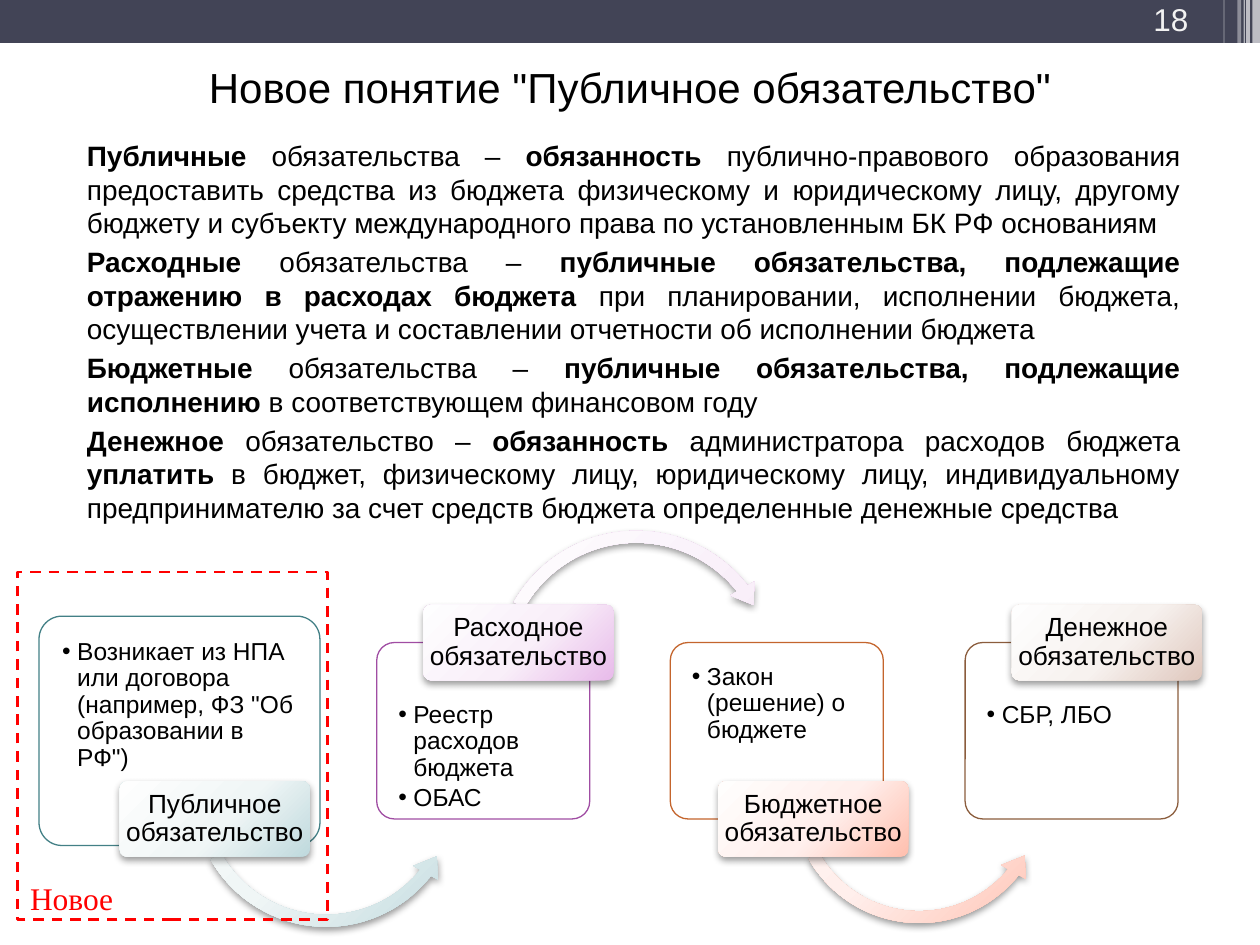
from pptx import Presentation
from pptx.dml.color import RGBColor
from pptx.enum.dml import MSO_LINE
from pptx.enum.shapes import MSO_SHAPE
from pptx.enum.text import MSO_ANCHOR, MSO_AUTO_SIZE, PP_ALIGN
from pptx.oxml import parse_xml
from pptx.oxml.ns import nsdecls, qn
from pptx.util import Inches, Pt

# ---- Content ----
COLOURS = {"bar": "424456", "white": "FFFFFF", "black": "000000",
           "number": "F2F2F2", "new": "FF0000"}
TITLE = 'Новое понятие "Публичное обязательство"'
# Asterisks enclose the bold parts
DEFINITIONS = [
    "*Публичные *обязательства – *обязанность* публично-правового образования "
    "предоставить средства из бюджета физическому и юридическому лицу, другому "
    "бюджету и субъекту международного права по установленным БК РФ основаниям",
    "*Расходные *обязательства – *публичные обязательства, подлежащие отражению "
    "в расходах бюджета* при планировании, исполнении бюджета, осуществлении "
    "учета и составлении отчетности об исполнении бюджета",
    "*Бюджетные *обязательства – *публичные обязательства, подлежащие исполнению "
    "*в соответствующем финансовом году",
    "*Денежное *обязательство – *обязанность* администратора расходов бюджета "
    "*уплатить* в бюджет, физическому лицу, юридическому лицу, индивидуальному "
    "предпринимателю за счет средств бюджета определенные денежные средства",
]
# Card position, label left, outline, label gradient, arrow (place, adjustments)
STEPS = [
    {"label": "Публичное обязательство", "raised": False,
     "items": ['Возникает из НПА или договора (например, ФЗ "Об образовании в РФ")'],
     "card": (0.31, 4.89, 2.23, 1.82), "label_left": 0.95, "line": "438086",
     "gradient": ("FEFEFE", "F0F6F6", "BFD9DD"),
     "arrow": ((1.47, 5.18, 2.24, 2.24), (0.043, 5.386, 23.112, 90.216, 0.05))},
    {"label": "Расходное обязательство", "raised": True,
     "items": ["Реестр расходов бюджета", "ОБАС"],
     "card": (2.99, 5.1, 1.69, 1.4), "label_left": 3.36, "line": "A04DA3",
     "gradient": ("FEFEFF", "F9EFF9", "E8BBEA"),
     "arrow": ((3.87, 4.15, 2.36, 2.36), (0.04, 5.068, 193.177, 125.755, 0.047))},
    {"label": "Бюджетное обязательство", "raised": False,
     "items": ["Закон (решение) о бюджете"],
     "card": (5.32, 5.1, 1.69, 1.4), "label_left": 5.7, "line": "C4652D",
     "gradient": ("FFFEFD", "FFEFEC", "FFBFAE"),
     "arrow": ((6.22, 5.24, 2.15, 2.15), (0.044, 5.635, 23.39, 90.245, 0.052))},
    {"label": "Денежное обязательство", "raised": True,
     "items": ["СБР, ЛБО"],
     "card": (7.66, 5.1, 1.69, 1.4), "label_left": 8.03, "line": "8B5D3D",
     "gradient": ("FEFEFE", "F7F2EF", "DFC7BD"), "arrow": None},
]
# Header strips: left, width, height, opacity in percent
STRIPS = [(9.94, 0.06, 0.68, 65), (9.89, 0.03, 0.68, 65), (9.87, 0.01, 0.68, 60),
          (9.82, 0.03, 0.68, 40), (9.71, 0.01, 0.64, 30)]

deck = Presentation()
deck.slide_width, deck.slide_height = Inches(10), Inches(7.5)
page = deck.slides.add_slide(deck.slide_layouts[1])


# ---- Helpers ----
def rgb(value):
    return RGBColor.from_string(value)


def add_shape(kind, place, fill=None, line=None, width=0.75):
    shape = page.shapes.add_shape(kind, *map(Inches, place))
    shape.shadow.inherit = False
    if fill:
        shape.fill.solid()
        shape.fill.fore_color.rgb = rgb(fill)
    else:
        shape.fill.background()
    if line:
        shape.line.color.rgb = rgb(line)
        shape.line.width = Pt(width)
    else:
        shape.line.fill.background()
    return shape


def add_glow(shape, gradient):
    """Radial gradient fill and a soft shadow below."""
    properties = shape._element.spPr
    stops = "".join(f'<a:gs pos="{pos}"><a:srgbClr val="{value}"/></a:gs>'
                    for pos, value in zip((0, 55000, 100000), gradient))
    properties.replace(properties.find(qn("a:solidFill")), parse_xml(
        f'<a:gradFill {nsdecls("a")} rotWithShape="1"><a:gsLst>{stops}</a:gsLst>'
        '<a:path path="circle"><a:fillToRect l="-40000" t="-90000" r="140000" '
        'b="190000"/></a:path></a:gradFill>'))
    properties.find(qn("a:effectLst")).append(parse_xml(
        f'<a:outerShdw {nsdecls("a")} blurRad="{Pt(4.1)}" dist="{Pt(2)}" '
        'dir="5400000" rotWithShape="0"><a:srgbClr val="000000">'
        '<a:alpha val="40000"/></a:srgbClr></a:outerShdw>'))


def set_frame(shape, margins, anchor=MSO_ANCHOR.TOP, wrap=True):
    frame = shape.text_frame
    frame.auto_size = MSO_AUTO_SIZE.NONE
    frame.word_wrap = wrap
    frame.vertical_anchor = anchor
    for side, value in zip(("left", "top", "right", "bottom"), margins):
        setattr(frame, f"margin_{side}", Inches(value))
    return frame


def write(frame, texts, size, colour="black", font="Arial", bullet=None,
          indent=None, **layout):
    for index, text in enumerate(texts):
        para = frame.paragraphs[0] if index == 0 else frame.add_paragraph()
        values = dict(layout)
        if index == 0:
            values["space_before"] = Pt(0)
        for name, value in values.items():
            setattr(para, name, value)
        if indent:
            properties = para._p.get_or_add_pPr()
            for name, value in zip(("marL", "indent"), indent):
                properties.set(name, str(Inches(value)))
            marks = [f'buFont {nsdecls("a")} typeface="{font}"',
                     f'buChar {nsdecls("a")} char="{bullet}"']
            for mark in marks if bullet else [f'buNone {nsdecls("a")}']:
                properties.append(parse_xml(f"<a:{mark}/>"))
        for part, words in enumerate(text.split("*")):
            if words:
                span = para.add_run()
                span.text = words
                span.font.size, span.font.name = Pt(size), font
                span.font.bold = part % 2 == 1
                span.font.color.rgb = rgb(COLOURS[colour])


def place_on(shape, place):
    shape.left, shape.top, shape.width, shape.height = map(Inches, place)
    return shape


DEFAULT_MARGINS = (0.1, 0.05, 0.1, 0.05)

# ---- Header ----
add_shape(MSO_SHAPE.RECTANGLE, (0, 0, 10, 0.34), COLOURS["bar"])
for left, width, height, opacity in STRIPS:
    strip = add_shape(MSO_SHAPE.RECTANGLE, (left, 0, width, height), COLOURS["white"])
    strip._element.spPr.find(qn("a:solidFill"))[0].append(
        parse_xml(f'<a:alpha {nsdecls("a")} val="{opacity * 1000}"/>'))
number = page.shapes.add_textbox(*map(Inches, (8.74, 0.02, 0.79, 0.33)))
write(set_frame(number, DEFAULT_MARGINS, MSO_ANCHOR.BOTTOM), ["18"], 18, "number",
      alignment=PP_ALIGN.RIGHT)

# ---- Title and definitions ----
title = place_on(page.shapes.title, (0.5, 0.41, 9, 0.55))
write(set_frame(title, DEFAULT_MARGINS, MSO_ANCHOR.MIDDLE), [TITLE], 24,
      alignment=PP_ALIGN.CENTER)
body = place_on(page.placeholders[1], (0.47, 1.05, 9, 3.13))
write(set_frame(body, DEFAULT_MARGINS), DEFINITIONS, 16, indent=(0.12, 0),
      alignment=PP_ALIGN.JUSTIFY, space_before=Pt(3), line_spacing=1.0)

# ---- Process: card, arrow to the next step, label ----
for step in STEPS:
    card = add_shape(MSO_SHAPE.ROUNDED_RECTANGLE, step["card"], COLOURS["white"], step["line"])
    card.adjustments[0] = 0.1
    top = 0.43 if step["raised"] else 0.13
    write(set_frame(card, (0.13, top, 0.13, 0.13)), step["items"], 14, bullet="•",
          indent=(0.12, -0.12), alignment=PP_ALIGN.LEFT, line_spacing=0.9,
          space_after=Pt(2))
    if step["arrow"]:
        place, adjustments = step["arrow"]
        kind = MSO_SHAPE.CIRCULAR_ARROW if step["raised"] else MSO_SHAPE.LEFT_CIRCULAR_ARROW
        arrow = add_shape(kind, place, COLOURS["white"])
        for index, value in enumerate(adjustments):
            arrow.adjustments[index] = value
        add_glow(arrow, step["gradient"])
    label_top = 4.8 if step["raised"] else 6.2
    label = add_shape(MSO_SHAPE.ROUNDED_RECTANGLE,
                      (step["label_left"], label_top, 1.51, 0.6), COLOURS["white"])
    label.adjustments[0] = 0.1
    add_glow(label, step["gradient"])
    write(set_frame(label, (0.03, 0.02, 0.03, 0.02), MSO_ANCHOR.MIDDLE), [step["label"]],
          15, alignment=PP_ALIGN.CENTER, line_spacing=0.9)

# ---- Frame marking the new notion ----
marker = add_shape(MSO_SHAPE.RECTANGLE, (0.14, 4.54, 2.46, 2.76), None, COLOURS["new"], 1.5)
marker.line.dash_style = MSO_LINE.DASH
note = page.shapes.add_textbox(*map(Inches, (0.14, 6.93, 0.87, 0.4)))
write(set_frame(note, DEFAULT_MARGINS, wrap=False), ["Новое"], 18, "new", "Times New Roman")

deck.save("out.pptx")
